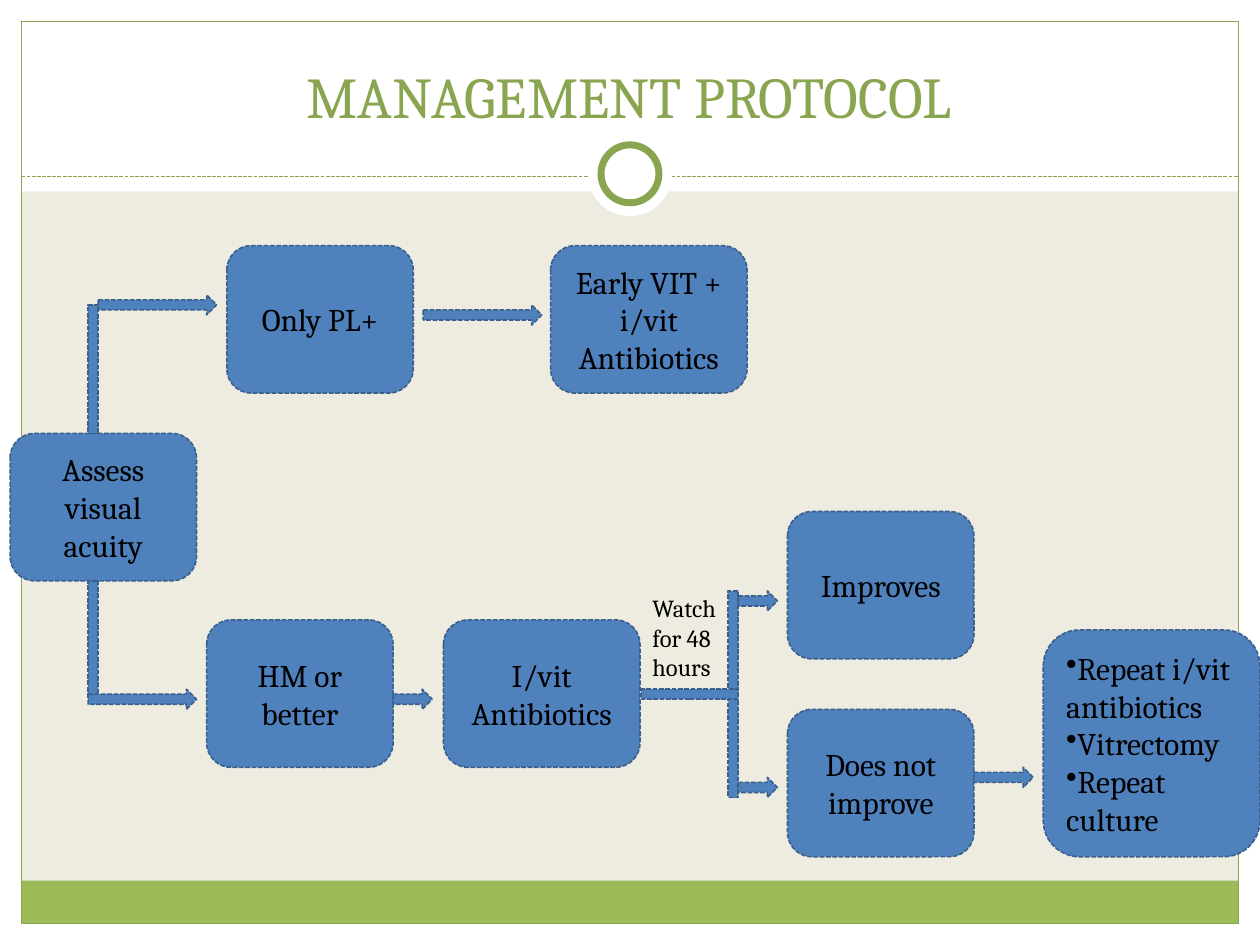
import collections

import pptx
import pptx.dml.color
import pptx.enum.dml
import pptx.enum.shapes
import pptx.enum.text
import pptx.oxml
import pptx.oxml.ns
import pptx.util

Inches = pptx.util.Inches
RGBColor = pptx.dml.color.RGBColor
Kind = pptx.enum.shapes.MSO_SHAPE
Align = pptx.enum.text.PP_ALIGN
Anchor = pptx.enum.text.MSO_ANCHOR
Dash = pptx.enum.dml.MSO_LINE

WHITE = RGBColor(0xFF, 0xFF, 0xFF)
BLACK = RGBColor(0x00, 0x00, 0x00)
CREAM = RGBColor(0xEE, 0xEC, 0xE1)
GREEN = RGBColor(0x9B, 0xBB, 0x59)
DARK_GREEN = RGBColor(0x89, 0xA5, 0x4F)
BLUE = RGBColor(0x4F, 0x81, 0xBD)
DARK_BLUE = RGBColor(0x3A, 0x5F, 0x8C)

FONT = "Cambria"
BAR = 0.08
ARROW = 0.16
NODE_HEIGHT = 1.17

Box = collections.namedtuple("Box", "left top width height")


def within(area, left, top, width, height):
    """Return a box given by its offset from the corner of an area."""
    return Box(area.left + left, area.top + top, width, height)


def lengths(box):
    """Return the four measures of a box as slide lengths."""
    return [Inches(value) for value in box]


def add_shape(page, kind, box, fill=None, line=None, weight=0.75, dash=None):
    """Add a preset shape with the given fill and outline."""
    shape = page.shapes.add_shape(kind, *lengths(box))
    shape.shadow.inherit = False
    if fill is None:
        shape.fill.background()
    else:
        shape.fill.solid()
        shape.fill.fore_color.rgb = fill
    if line is None:
        shape.line.fill.background()
    else:
        shape.line.color.rgb = line
        shape.line.width = pptx.util.Pt(weight)
        if dash is not None:
            shape.line.dash_style = dash
    return shape


def add_bullet(para):
    """Give a paragraph a bullet that has no hanging indent."""
    properties = para._p.get_or_add_pPr()
    properties.set("marL", "0")
    properties.set("indent", "0")
    bullet = pptx.oxml.parse_xml(
        "<a:buChar %s char='•'/>" % pptx.oxml.ns.nsdecls("a"))
    properties.append(bullet)


def write_text(shape, text, size=18, color=BLACK, align=Align.CENTER,
               anchor=Anchor.MIDDLE, bullets=False):
    """Write each line of the text as a formatted paragraph."""
    frame = shape.text_frame
    frame.word_wrap = True
    frame.vertical_anchor = anchor
    for index, words in enumerate(text.split("\n")):
        para = frame.add_paragraph() if index else frame.paragraphs[0]
        para.alignment = align
        if bullets:
            add_bullet(para)
        span = para.add_run()
        span.text = words
        span.font.name = FONT
        span.font.size = pptx.util.Pt(size)
        span.font.color.rgb = color


def add_flow_shape(page, kind, box):
    """Add a blue flowchart part with a dashed outline."""
    return add_shape(page, kind, box, BLUE, DARK_BLUE, 0.9, Dash.SQUARE_DOT)


def draw_frame(page, area):
    """Draw the white margins, green band, border and divider."""
    margin = 0.17
    right = area.width - margin
    inner = area.width - 2 * margin
    bottom = area.height - margin
    for place in (
        (0, bottom, area.width, margin),
        (0, 0, area.width, 1.52),
        (0, 0, margin, area.height),
        (right, 0, margin, area.height),
    ):
        add_shape(page, Kind.RECTANGLE, within(area, *place), WHITE)
    band = within(area, margin, bottom - 0.34, inner, 0.34)
    add_shape(page, Kind.RECTANGLE, band, GREEN)
    border = within(area, margin, margin, inner, bottom - margin)
    add_shape(page, Kind.RECTANGLE, border, line=DARK_GREEN)

    height = Inches(area.top + 1.4)
    divider = page.shapes.add_connector(
        pptx.enum.shapes.MSO_CONNECTOR.STRAIGHT,
        Inches(area.left + margin), height, Inches(area.left + right), height)
    divider.line.color.rgb = DARK_GREEN
    divider.line.width = pptx.util.Pt(0.75)
    divider.line.dash_style = Dash.SQUARE_DOT
    divider._element.spPr.append(pptx.oxml.parse_xml(
        "<a:effectLst %s/>" % pptx.oxml.ns.nsdecls("a")))

    for size, line in ((0.67, None), (0.46, DARK_GREEN)):
        circle = within(area, (area.width - size) / 2, 1.38 - size / 2,
                        size, size)
        add_shape(page, Kind.OVAL, circle, WHITE, line, 4)


def draw_title(page, box):
    """Write the slide title at the foot of its box."""
    title = page.shapes.add_textbox(*lengths(box))
    write_text(title, "MANAGEMENT PROTOCOL", size=33, color=DARK_GREEN,
               anchor=Anchor.BOTTOM)


def draw_nodes(page, area):
    """Draw the rounded steps of the protocol."""
    for text, left, top, width in (
        ("Assess visual acuity", 0, 1.49, 1.48),
        ("Only PL+", 1.72, 0, 1.48),
        ("Early VIT + i/vit Antibiotics", 4.29, 0, 1.56),
        ("HM or better", 1.56, 2.97, 1.48),
        ("I/vit Antibiotics", 3.44, 2.97, 1.56),
        ("Improves", 6.17, 2.11, 1.48),
        ("Does not improve", 6.17, 3.68, 1.48),
    ):
        box = within(area, left, top, width, NODE_HEIGHT)
        write_text(add_flow_shape(page, Kind.ROUNDED_RECTANGLE, box), text)
    box = within(area, 8.2, 3.05, 1.72, 1.8)
    write_text(add_flow_shape(page, Kind.ROUNDED_RECTANGLE, box),
               "Repeat i/vit antibiotics\nVitrectomy\nRepeat culture",
               align=Align.LEFT, bullets=True)


def draw_links(page, area):
    """Draw the bars and arrows between the steps, and the waiting time."""
    for left, top, width, height in (
        (0.62, 0.47, BAR, 1.02),
        (0.62, 2.66, BAR, 0.94),
        (5.01, 3.52, 0.77, BAR),
        (5.7, 2.74, BAR, 0.78),
        (5.7, 3.6, BAR, 0.78),
    ):
        add_flow_shape(page, Kind.RECTANGLE,
                       within(area, left, top, width, height))
    for left, top, width in (
        (0.7, 0.39, 0.94),
        (0.62, 3.52, 0.86),
        (3.28, 0.47, 0.94),
        (3.04, 3.52, 0.31),
        (5.78, 4.22, 0.31),
        (5.78, 2.74, 0.31),
        (7.65, 4.14, 0.47),
    ):
        add_flow_shape(page, Kind.RIGHT_ARROW,
                       within(area, left, top, width, ARROW))
    label = page.shapes.add_textbox(
        *lengths(within(area, 5, 2.71, 0.86, 0.81)))
    write_text(label, "Watch for 48 hours", size=14, align=Align.LEFT,
               anchor=Anchor.TOP)


def main():
    """Build the slide and save the deck."""
    deck = pptx.Presentation()
    deck.slide_width = Inches(10)
    deck.slide_height = Inches(7.5)
    page = deck.slides.add_slide(deck.slide_layouts[6])
    page.background.fill.solid()
    page.background.fill.fore_color.rgb = CREAM
    flow = Box(0.08, 1.95, 9.92, 4.85)
    draw_frame(page, Box(0, 0, 10, 7.5))
    draw_title(page, Box(0.33, 0.25, 9.33, 0.83))
    draw_nodes(page, flow)
    draw_links(page, flow)
    deck.save("out.pptx")


if __name__ == "__main__":
    main()
